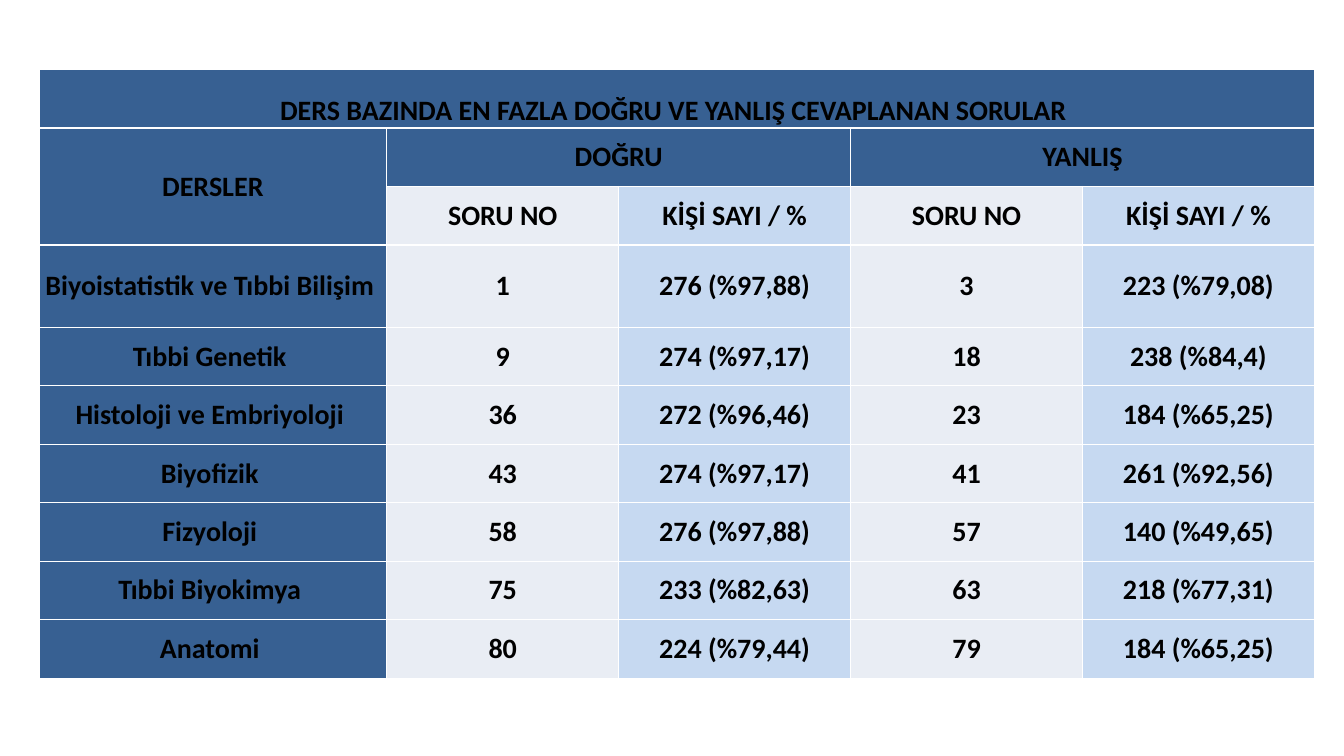
"""Build the slide listing the most correctly and wrongly answered questions per course."""
from dataclasses import dataclass

import lxml.etree
import pptx
import pptx.dml.color
import pptx.enum.text
import pptx.oxml.ns
import pptx.table
import pptx.util

SLIDE_WIDTH = pptx.util.Inches(13.33)
SLIDE_HEIGHT = pptx.util.Inches(7.5)
COLUMN = pptx.util.Inches(2.3)
ROW = pptx.util.Inches(0.58)
COLUMN_SHARES = (1.5, 1, 1, 1, 1)
TALL_ROW = 3
TALL_SHARE = 1.41

HEADING_FILL = "376092"
QUESTION_FILL = "E9EDF4"
PEOPLE_FILL = "C6D9F1"
BORDER = "FFFFFF"
INK = "000000"

MIDDLE = pptx.enum.text.MSO_ANCHOR.MIDDLE
BOTTOM = pptx.enum.text.MSO_ANCHOR.BOTTOM
CELL_FORMAT = dict.fromkeys(
    ("margin_left", "margin_right", "margin_top", "margin_bottom"), 0)
FONT_FORMAT = {"name": "Calibri", "size": pptx.util.Pt(20), "bold": True}


@dataclass(frozen=True)
class Heading:
    text: str
    row: int
    column: int
    rows: int = 1
    columns: int = 1
    anchor: pptx.enum.text.MSO_ANCHOR = MIDDLE


@dataclass(frozen=True)
class Course:
    name: str
    correct_question: str
    correct_people: str
    wrong_question: str
    wrong_people: str

    def texts(self) -> tuple[str, ...]:
        return (self.name, self.correct_question, self.correct_people,
                self.wrong_question, self.wrong_people)


HEADINGS = (
    Heading("DERS BAZINDA EN FAZLA DOĞRU VE YANLIŞ CEVAPLANAN SORULAR ",
            0, 0, columns=5, anchor=BOTTOM),
    Heading("DERSLER", 1, 0, rows=2),
    Heading("DOĞRU", 1, 1, columns=2),
    Heading("YANLIŞ", 1, 3, columns=2),
)
SUBHEADINGS = ("", "SORU NO", "KİŞİ SAYI / %", "SORU NO", "KİŞİ SAYI / %")
COURSES = (
    Course("Biyoistatistik ve Tıbbi Bilişim ", "1", "276 (%97,88)", "3", "223 (%79,08)"),
    Course("Tıbbi Genetik ", "9", "274 (%97,17)", "18", "238 (%84,4)"),
    Course("Histoloji ve Embriyoloji ", "36", "272 (%96,46)", "23", "184 (%65,25)"),
    Course("Biyofizik ", "43", "274 (%97,17)", "41", "261 (%92,56)"),
    Course("Fizyoloji ", "58", "276 (%97,88)", "57", "140 (%49,65)"),
    Course("Tıbbi Biyokimya ", "75", "233 (%82,63)", "63", "218 (%77,31)"),
    Course("Anatomi ", "80", "224 (%79,44)", "79", "184 (%65,25)"),
)
FIRST_BODY_ROW = 2
BODY = (SUBHEADINGS, *(course.texts() for course in COURSES))


def color(value: str) -> pptx.dml.color.RGBColor:
    return pptx.dml.color.RGBColor.from_string(value)


def apply_format(target: object, values: dict) -> None:
    for name, value in values.items():
        setattr(target, name, value)


def fill_for(row: int, column: int) -> str:
    if row < FIRST_BODY_ROW or column == 0:
        return HEADING_FILL
    return QUESTION_FILL if column % 2 else PEOPLE_FILL


def style_cell(cell: pptx.table._Cell, fill: str) -> None:
    properties = cell._tc.get_or_add_tcPr()
    qualified = pptx.oxml.ns.qn
    for side in ("lnL", "lnR", "lnT", "lnB"):
        line = lxml.etree.SubElement(
            properties, qualified(f"a:{side}"), w=str(pptx.util.Pt(1)))
        paint = lxml.etree.SubElement(line, qualified("a:solidFill"))
        lxml.etree.SubElement(paint, qualified("a:srgbClr"), val=BORDER)
    cell.fill.solid()
    cell.fill.fore_color.rgb = color(fill)
    apply_format(cell, CELL_FORMAT)


def write_cell(cell: pptx.table._Cell, text: str,
               anchor: pptx.enum.text.MSO_ANCHOR = MIDDLE) -> None:
    cell.vertical_anchor = anchor
    paragraph = cell.text_frame.paragraphs[0]
    paragraph.alignment = pptx.enum.text.PP_ALIGN.CENTER
    run = paragraph.add_run()
    run.text = text
    apply_format(run.font, FONT_FORMAT)
    run.font.color.rgb = color(INK)


def size_grid(results: pptx.table.Table) -> None:
    for column, share in zip(results.columns, COLUMN_SHARES):
        column.width = round(COLUMN * share)
    for index, row in enumerate(results.rows):
        row.height = round(ROW * (TALL_SHARE if index == TALL_ROW else 1))


def fill_results(results: pptx.table.Table) -> None:
    for row in range(len(results.rows)):
        for column in range(len(results.columns)):
            style_cell(results.cell(row, column), fill_for(row, column))
    for heading in HEADINGS:
        start = results.cell(heading.row, heading.column)
        start.merge(results.cell(heading.row + heading.rows - 1,
                                 heading.column + heading.columns - 1))
        write_cell(start, heading.text, heading.anchor)
    for row, texts in enumerate(BODY, FIRST_BODY_ROW):
        for column, text in enumerate(texts):
            if text:
                write_cell(results.cell(row, column), text)


def main() -> None:
    deck = pptx.Presentation()
    apply_format(deck, {"slide_width": SLIDE_WIDTH, "slide_height": SLIDE_HEIGHT})
    slide = deck.slides.add_slide(deck.slide_layouts[6])
    row_count = FIRST_BODY_ROW + len(BODY)
    results = slide.shapes.add_table(
        row_count, len(COLUMN_SHARES),
        round(SLIDE_WIDTH * 0.029), round(SLIDE_HEIGHT * 0.092),
        round(COLUMN * sum(COLUMN_SHARES)),
        round(ROW * (row_count - 1 + TALL_SHARE))).table
    size_grid(results)
    fill_results(results)
    deck.save("out.pptx")


if __name__ == "__main__":
    main()
